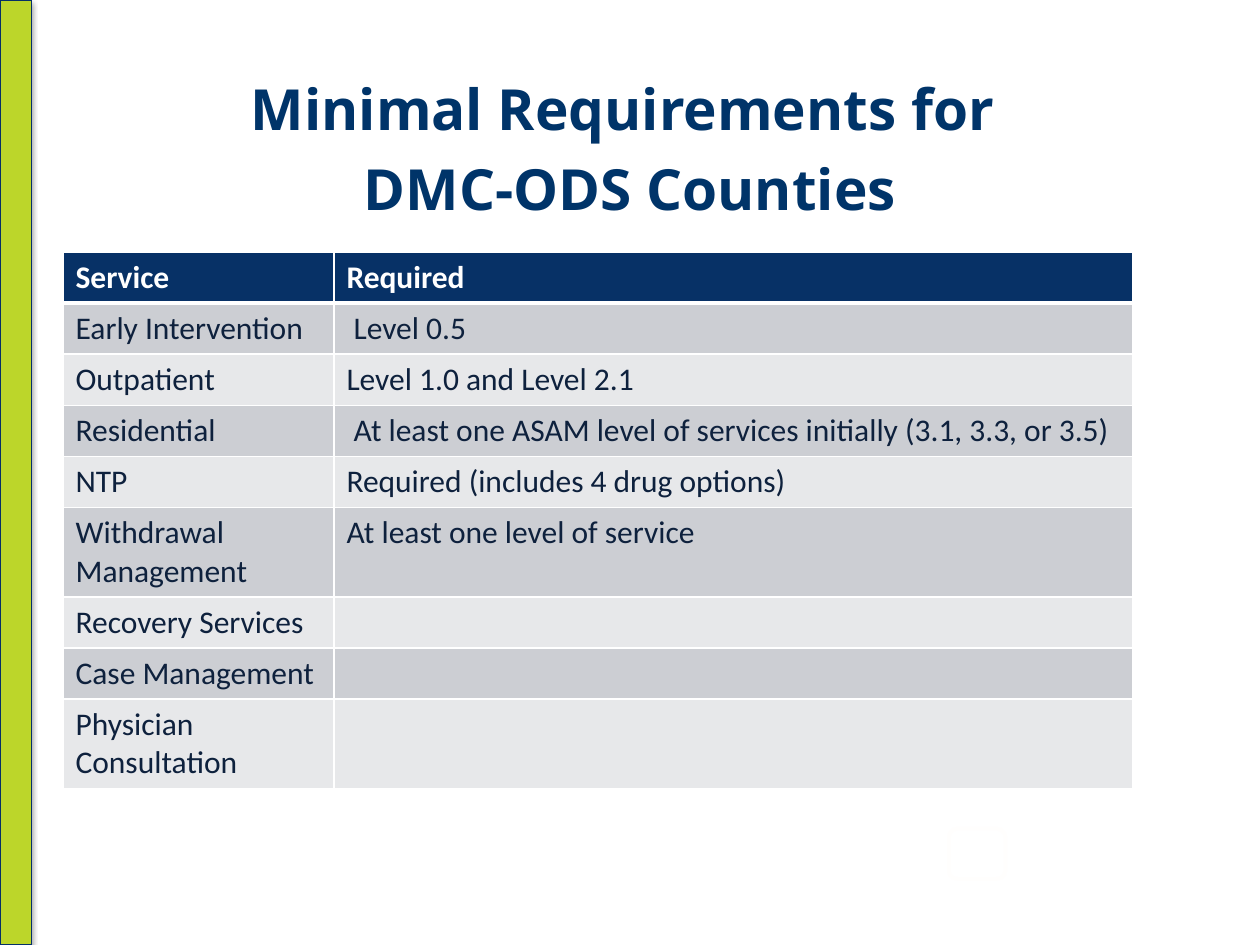
from dataclasses import dataclass
from typing import NamedTuple

from lxml import etree
from pptx import Presentation
from pptx.dml.color import RGBColor
from pptx.enum.shapes import MSO_SHAPE
from pptx.enum.text import MSO_ANCHOR, MSO_AUTO_SIZE, PP_ALIGN
from pptx.oxml.ns import qn
from pptx.util import Inches, Pt

RECT, ROUNDED = MSO_SHAPE.RECTANGLE, MSO_SHAPE.ROUNDED_RECTANGLE
MIDDLE, CENTER, NO_FIT = MSO_ANCHOR.MIDDLE, PP_ALIGN.CENTER, MSO_AUTO_SIZE.NONE
TITLE_ONLY = 5
WIDTH, HEIGHT = Inches(10), Inches(7.5)


@dataclass(frozen=True)
class Theme:
    title_font: str = "Open Sans"
    body_font: str = "Calibri"
    title_size: float = 32.4
    title_spacing: float = 46
    body_size: float = 18
    title: str = "003469"
    text: str = "0E213D"
    header: str = "073166"
    bands: tuple[str, str] = ("CCCED3", "E7E8EA")
    white: str = "FFFFFF"
    lime: str = "BCD62A"
    bar_line: str = "053066"
    badge_line: str = "FFFEFD"
    rule: float = 1
    header_rule: float = 3


class Box(NamedTuple):
    """Left, top, width and height as shares of the slide."""
    x: float
    y: float
    w: float
    h: float

    def emu(self) -> tuple[int, int, int, int]:
        return (int(self.x * WIDTH), int(self.y * HEIGHT),
                int(self.w * WIDTH), int(self.h * HEIGHT))


class Panel(NamedTuple):
    shape: int
    box: Box
    fill: str
    line: str
    line_width: float


class Service(NamedTuple):
    name: str
    required: str = ""
    lines: int = 1


T = Theme()
BADGE = Panel(ROUNDED, Box(0.753, 0.877, 0.045, 0.053), T.white, T.badge_line, 2)
SIDE_BAR = Panel(RECT, Box(0, 0, 0.025, 1), T.lime, T.bar_line, 0.75)
TITLE_BOX = Box(0.05, 1 / 15, 0.9, 1 / 6)
TABLE_BOX = Box(0.05, 4 / 15, 0.849, 0.49)
COLUMNS = (0.215, 0.634)
ROW_HEIGHTS = {1: Inches(0.38), 2: Inches(0.67)}
SERVICES = [
    Service("Service", "Required"),
    Service("Early Intervention", " Level 0.5"),
    Service("Outpatient", "Level 1.0 and Level 2.1"),
    Service("Residential",
            " At least one ASAM level of services initially (3.1, 3.3, or 3.5)"),
    Service("NTP", "Required (includes 4 drug options)"),
    Service("Withdrawal Management", "At least one level of service", lines=2),
    Service("Recovery Services"),
    Service("Case Management"),
    Service("Physician Consultation"),
]


def rgb(color: str) -> RGBColor:
    return RGBColor.from_string(color)


def style_font(font, name: str, size: float, color: str, bold: bool) -> None:
    font.name, font.size, font.bold = name, Pt(size), bold
    font.color.rgb = rgb(color)


def add_panel(s, panel: Panel):
    sp = s.shapes.add_shape(panel.shape, *panel.box.emu())
    sp.fill.solid()
    sp.fill.fore_color.rgb = rgb(panel.fill)
    sp.line.color.rgb = rgb(panel.line)
    sp.line.width = Pt(panel.line_width)
    sp.shadow.inherit = False
    return sp


def add_shadow(sp, blur: float, distance: float, opacity: int) -> None:
    """Cast a black shadow straight down."""
    effects = sp._element.spPr.find(qn("a:effectLst"))
    shadow = etree.SubElement(effects, qn("a:outerShdw"), blurRad=str(Pt(blur)),
                              dist=str(Pt(distance)), dir="5400000", rotWithShape="0")
    color = etree.SubElement(shadow, qn("a:srgbClr"), val="000000")
    etree.SubElement(color, qn("a:alpha"), val=str(opacity * 1000))


def set_title(s, text: str) -> None:
    sp = s.shapes.title
    sp.left, sp.top, sp.width, sp.height = TITLE_BOX.emu()
    tf = sp.text_frame
    tf.margin_left = tf.margin_top = tf.margin_right = tf.margin_bottom = 0
    tf.word_wrap, tf.auto_size, tf.vertical_anchor = True, NO_FIT, MIDDLE
    p = tf.paragraphs[0]
    p.text = text
    p.alignment, p.line_spacing = CENTER, Pt(T.title_spacing)
    for r in p.runs:
        style_font(r.font, T.title_font, T.title_size, T.title, True)


def set_borders(cell, top: float, bottom: float) -> None:
    tc_pr = cell._tc.get_or_add_tcPr()
    for side, width in (("L", T.rule), ("R", T.rule), ("T", top), ("B", bottom)):
        ln = etree.SubElement(tc_pr, qn(f"a:ln{side}"), w=str(Pt(width)))
        fill = etree.SubElement(ln, qn("a:solidFill"))
        etree.SubElement(fill, qn("a:srgbClr"), val=T.white)


def fill_cell(cell, text: str, row: int) -> None:
    header = row == 0
    set_borders(cell, T.header_rule if row == 1 else T.rule,
                T.header_rule if header else T.rule)
    cell.fill.solid()
    cell.fill.fore_color.rgb = rgb(T.header if header else T.bands[(row - 1) % 2])
    p = cell.text_frame.paragraphs[0]
    p.text = text
    style_font(p.font, T.body_font, T.body_size, T.white if header else T.text, header)
    for r in p.runs:
        style_font(r.font, T.body_font, T.body_size,
                   T.white if header else T.text, header)


def add_services(s, services: list[Service]) -> None:
    table = s.shapes.add_table(len(services), len(COLUMNS), *TABLE_BOX.emu()).table
    for column, share in zip(table.columns, COLUMNS):
        column.width = int(share * WIDTH)
    for row, service in enumerate(services):
        table.rows[row].height = ROW_HEIGHTS[service.lines]
        for col, text in enumerate((service.name, service.required)):
            fill_cell(table.cell(row, col), text, row)


def main() -> None:
    prs = Presentation()
    prs.slide_width, prs.slide_height = WIDTH, HEIGHT
    s = prs.slides.add_slide(prs.slide_layouts[TITLE_ONLY])

    # Background decoration
    add_panel(s, BADGE)
    add_shadow(add_panel(s, SIDE_BAR), blur=3.1, distance=1.8, opacity=35)

    # Title and table
    set_title(s, "Minimal Requirements for \vDMC-ODS Counties")
    add_services(s, SERVICES)

    prs.save("out.pptx")


if __name__ == "__main__":
    main()
